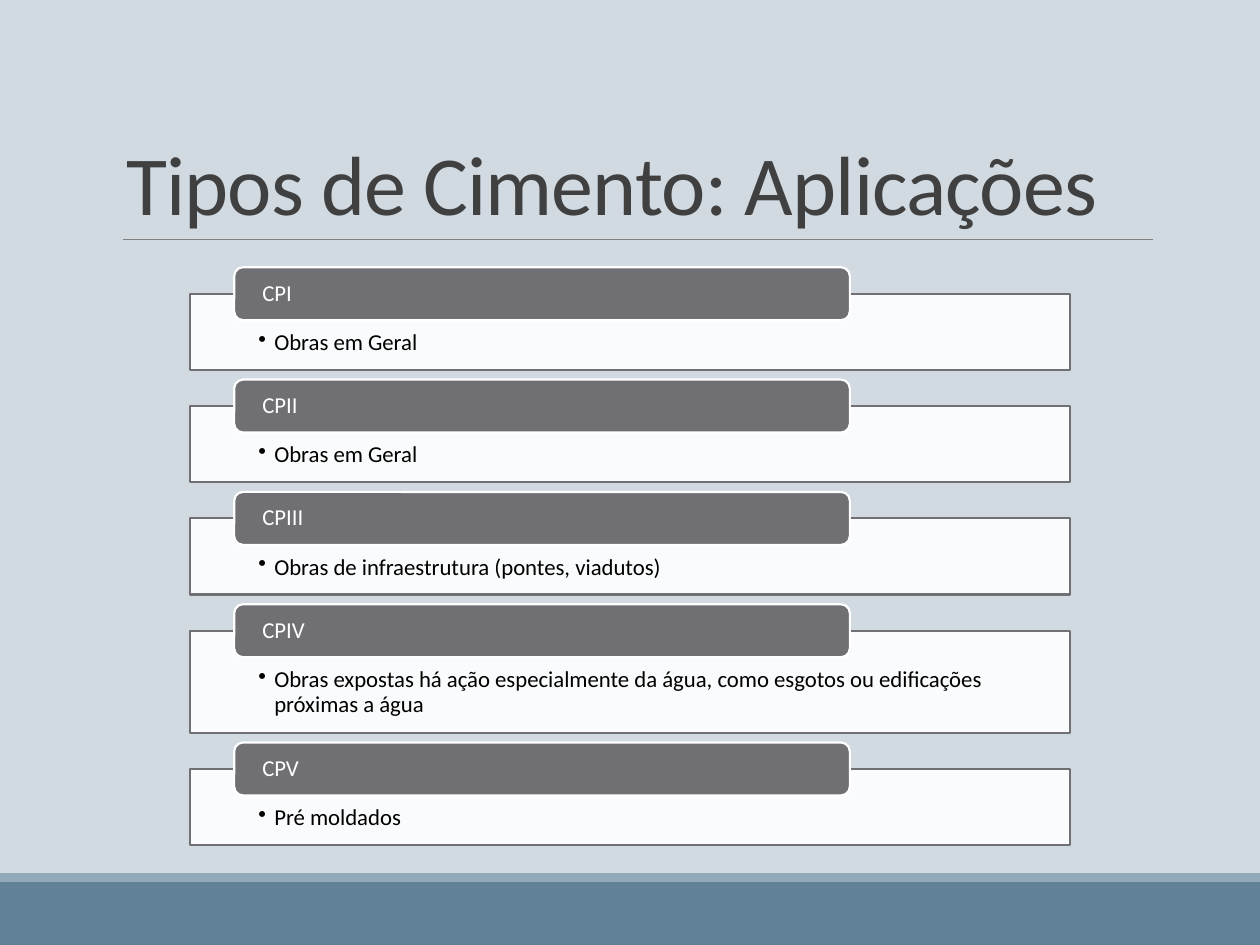
from lxml.etree import SubElement
from pptx import Presentation
from pptx.dml.color import RGBColor
from pptx.enum.shapes import MSO_CONNECTOR, MSO_SHAPE
from pptx.enum.text import MSO_ANCHOR, MSO_AUTO_SIZE, PP_ALIGN
from pptx.oxml.ns import qn
from pptx.util import Pt

BACKGROUND = RGBColor(0xD1, 0xD9, 0xE1)
FOOTER = RGBColor(0x61, 0x81, 0x97)
FOOTER_EDGE = RGBColor(0x92, 0xA9, 0xB9)
RULE = RGBColor(0x80, 0x80, 0x80)
TITLE = RGBColor(0x40, 0x40, 0x40)
GRAY = RGBColor(0x6F, 0x6F, 0x74)
WHITE = RGBColor(0xFF, 0xFF, 0xFF)
BLACK = RGBColor(0, 0, 0)

FONT = "Calibri"
SLIDE_WIDTH, SLIDE_HEIGHT = 720, 540
ROW_HEIGHT, EXTRA_LINE, ROW_GAP = 43.5, 14.8, 20.7
TAB_HEIGHT, TAB_RISE = 30.24, 15.1

# Cement type, use, number of text lines
CEMENTS = [
    ("CPI", "Obras em Geral", 1),
    ("CPII", "Obras em Geral", 1),
    ("CPIII", "Obras de infraestrutura (pontes, viadutos)", 1),
    ("CPIV", "Obras expostas há ação especialmente da água, como esgotos "
             "ou edificações próximas a água", 2),
    ("CPV", "Pré moldados", 1),
]


def add_box(slide, kind, box, fill, line=None):
    shape = slide.shapes.add_shape(kind, *(Pt(length) for length in box))
    shape.shadow.inherit = False
    shape.fill.solid()
    shape.fill.fore_color.rgb = fill
    if line is None:
        shape.line.fill.background()
    else:
        shape.line.color.rgb = line
        shape.line.width = Pt(1.25)
    return shape


def write(shape, text, size, color, anchor, margins, spacing=0.9):
    frame = shape.text_frame
    frame.text = text
    frame.word_wrap = True
    frame.auto_size = MSO_AUTO_SIZE.NONE
    frame.vertical_anchor = anchor
    (frame.margin_left, frame.margin_top,
     frame.margin_right, frame.margin_bottom) = (Pt(m) for m in margins)
    para = frame.paragraphs[0]
    para.alignment = PP_ALIGN.LEFT
    para.line_spacing = spacing
    font = para.runs[0].font
    font.name, font.size, font.color.rgb = FONT, Pt(size), color
    return para


def add_footer(slide, left, top, width, height):
    edge = 5.04
    add_box(slide, MSO_SHAPE.RECTANGLE,
            (left, top + edge, width, height - edge), FOOTER)
    add_box(slide, MSO_SHAPE.RECTANGLE, (left, top, width, edge), FOOTER_EDGE)


def add_title(slide, left, top, width, height):
    title = slide.shapes.title
    title.left, title.top = Pt(left), Pt(top)
    title.width, title.height = Pt(width), Pt(height)
    para = write(title, "Tipos de Cimento: Aplicações", 48, TITLE,
                 MSO_ANCHOR.BOTTOM, (7.2, 3.6, 7.2, 3.6), 0.85)
    para.runs[0].font._element.set("spc", "-50")

    # Rule under the title
    bottom = Pt(top + height)
    rule = slide.shapes.add_connector(
        MSO_CONNECTOR.STRAIGHT, Pt(left + 5.6), bottom, Pt(left + width), bottom)
    rule.line.color.rgb = RULE
    rule.line.width = Pt(0.5)
    SubElement(rule._element.spPr, qn("a:effectLst"))


def add_cement(slide, left, top, width, height, name, use):
    # Panel with the bulleted use
    panel = add_box(slide, MSO_SHAPE.RECTANGLE,
                    (left, top, width, height), WHITE, GRAY)
    color = panel.fill._xPr.find(qn("a:solidFill"))[0]
    SubElement(color, qn("a:alpha"), val="90000")
    para = write(panel, use, 13, BLACK, MSO_ANCHOR.TOP, (39, 21.3, 39, 7.2))
    para.level = 1
    properties = para._p.get_or_add_pPr()
    properties.set("marL", str(Pt(9)))
    properties.set("indent", str(-Pt(9)))
    SubElement(properties, qn("a:buChar"), char="•")

    # Tab with the cement type
    tab = add_box(slide, MSO_SHAPE.ROUNDED_RECTANGLE,
                  (left + width * 0.05, top - TAB_RISE, width * 0.7, TAB_HEIGHT),
                  GRAY, WHITE)
    write(tab, name, 13, WHITE, MSO_ANCHOR.MIDDLE, (14.6, 0, 14.6, 0))


def add_cement_list(slide, left, top, width):
    for name, use, lines in CEMENTS:
        height = ROW_HEIGHT + (lines - 1) * EXTRA_LINE
        add_cement(slide, left, top, width, height, name, use)
        top += height + ROW_GAP


def main():
    deck = Presentation()
    deck.slide_width, deck.slide_height = Pt(SLIDE_WIDTH), Pt(SLIDE_HEIGHT)
    slide = deck.slides.add_slide(deck.slide_layouts[5])
    slide.background.fill.solid()
    slide.background.fill.fore_color.rgb = BACKGROUND

    add_footer(slide, 0, 498.96, SLIDE_WIDTH, 41.04)
    add_title(slide, 64.8, 22.3, 594, 114.5)
    add_cement_list(slide, 108.7, 167.8, 502.6)
    deck.save("out.pptx")


if __name__ == "__main__":
    main()
